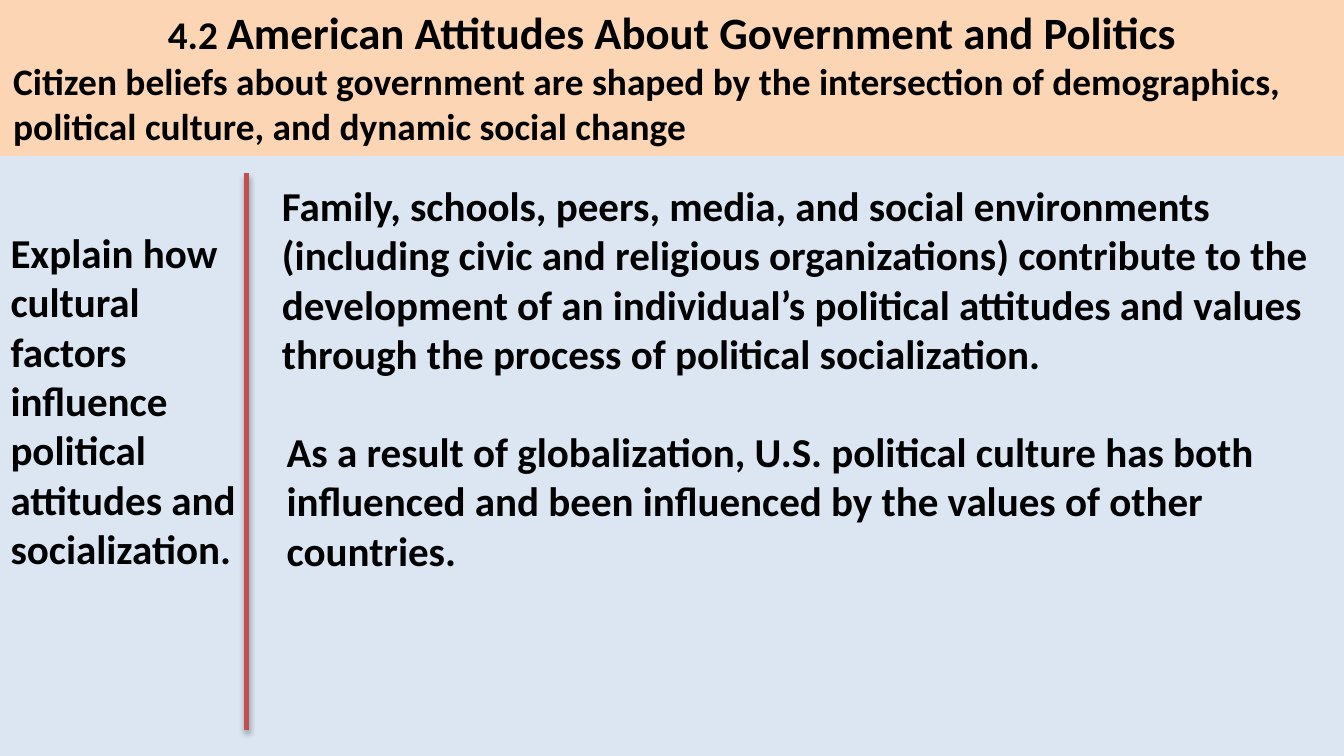
from lxml.etree import SubElement
from pptx import Presentation
from pptx.dml.color import RGBColor
from pptx.enum.shapes import MSO_CONNECTOR, MSO_SHAPE
from pptx.enum.text import MSO_ANCHOR, PP_ALIGN
from pptx.oxml.ns import qn
from pptx.util import Emu, Pt

SCALE = 4572  # EMU per px, 200 px to the inch
COLORS = {
    "page": "DCE6F2",
    "header": "FCD5B5",
    "text": "000000",
    "divider": "C0504D",
    "shadow": "000000",
}
FONT = {"name": "Calibri", "bold": True}
BODY_SIZE = 22


def px(*lengths):
    return [Emu(length * SCALE) for length in lengths]


def color(name):
    return RGBColor.from_string(COLORS[name])


def add_span(para, text, size):
    span = para.add_run()
    span.text = text
    for name, value in {**FONT, "size": Pt(size)}.items():
        setattr(span.font, name, value)
    span.font.color.rgb = color("text")


def add_header(page, box):
    banner = page.shapes.add_shape(MSO_SHAPE.RECTANGLE, *px(*box))
    banner.shadow.inherit = False
    banner.fill.solid()
    banner.fill.fore_color.rgb = color("header")
    banner.line.fill.background()
    frame = banner.text_frame
    frame.word_wrap = True
    frame.vertical_anchor = MSO_ANCHOR.TOP

    # Section number and title
    title = frame.paragraphs[0]
    title.alignment = PP_ALIGN.CENTER
    add_span(title, "4.2 ", 21)
    add_span(title, "American Attitudes About Government and Politics", 24)

    # Key idea
    idea = frame.add_paragraph()
    idea.alignment = PP_ALIGN.LEFT
    add_span(idea, "Citizen beliefs about government are shaped by the intersection of "
                   "demographics, political culture, and dynamic social change", 20)


def add_statement(page, box, text):
    frame = page.shapes.add_textbox(*px(*box)).text_frame
    frame.word_wrap = True
    add_span(frame.paragraphs[0], text, BODY_SIZE)


def add_divider(page, box):
    left, top, width, height = box
    divider = page.shapes.add_connector(
        MSO_CONNECTOR.STRAIGHT, *px(left, top, left + width, top + height))
    divider.line.color.rgb = color("divider")
    divider.line.width = Pt(3)

    # Soft shadow straight below
    effects = SubElement(divider._element.spPr, qn("a:effectLst"))
    shadow = SubElement(effects, qn("a:outerShdw"), blurRad=str(Pt(3.1)),
                        dist=str(Pt(1.8)), dir="5400000", rotWithShape="0")
    tint = SubElement(shadow, qn("a:srgbClr"), val=COLORS["shadow"])
    SubElement(tint, qn("a:alpha"), val="35000")


def main():
    deck = Presentation()
    deck.slide_width, deck.slide_height = px(2000, 1125)
    page = deck.slides.add_slide(deck.slide_layouts[6])
    page.background.fill.solid()
    page.background.fill.fore_color.rgb = color("page")

    add_header(page, (0, -3, 2000, 235))

    # Learning objective
    add_statement(page, (-4, 329, 384, 538),
                  "Explain how cultural factors influence political attitudes "
                  "and socialization.")
    add_divider(page, (367, 258, 0, 828))

    # Essential knowledge
    add_statement(page, (400, 259, 1600, 316),
                  "Family, schools, peers, media, and social environments (including "
                  "civic and religious organizations) contribute to the development of "
                  "an individual’s political attitudes and values through the process "
                  "of political socialization.")
    add_statement(page, (407, 625, 1600, 242),
                  "As a result of globalization, U.S. political culture has both "
                  "influenced and been influenced by the values of other countries.")

    deck.save("out.pptx")


if __name__ == "__main__":
    main()
